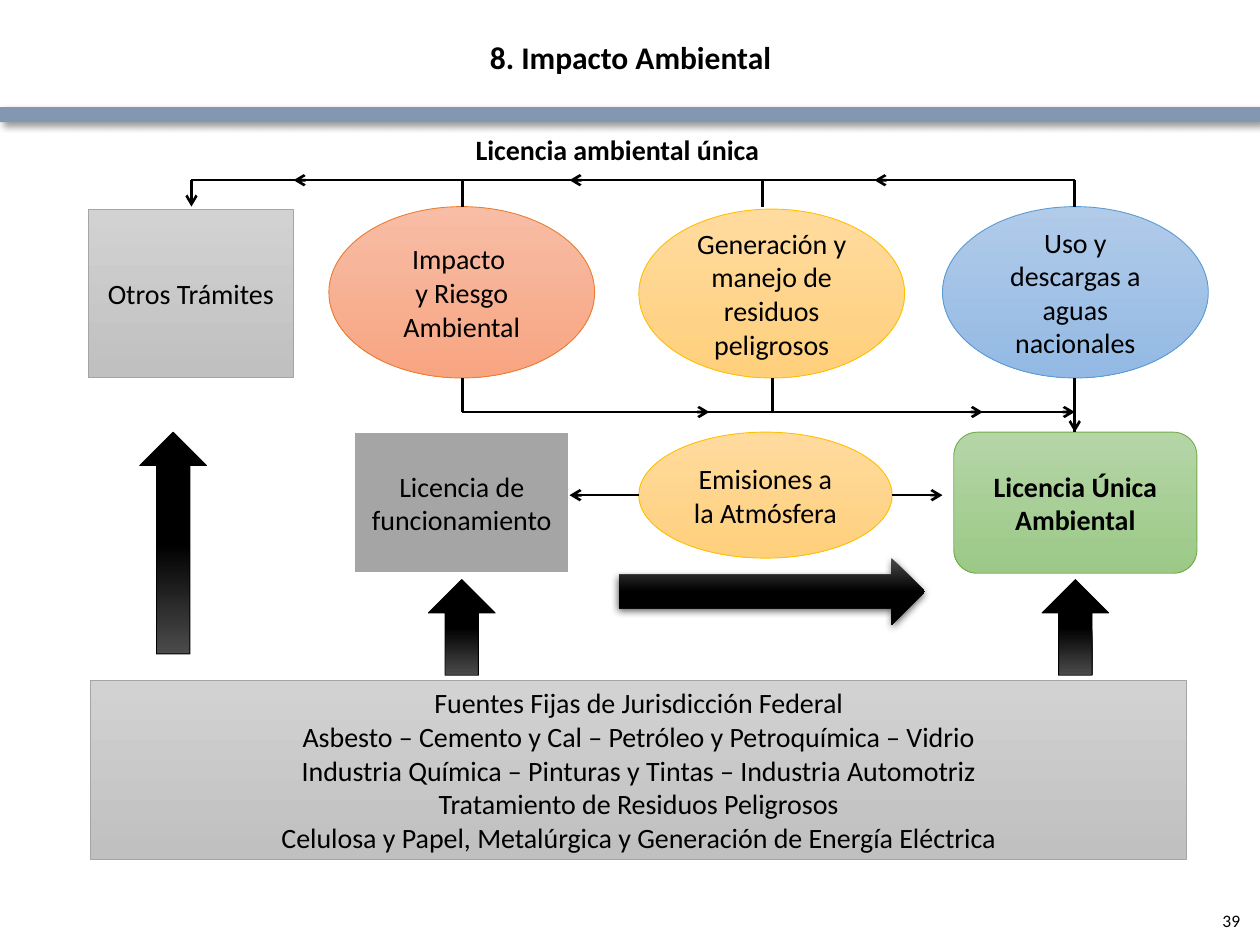
import pptx
import pptx.dml.color
import pptx.enum.shapes
import pptx.enum.text
import pptx.oxml.ns
import pptx.util
from lxml import etree

Inches = pptx.util.Inches
Shapes = pptx.enum.shapes.MSO_SHAPE
Align = pptx.enum.text.PP_ALIGN
Anchor = pptx.enum.text.MSO_ANCHOR

BLACK = "000000"
GRAY = (((0, "D2D2D2"), (1, "C0C0C0")), "A5A5A5", 0.5)
ORANGE = (((0, "F7BDA5"), (1, "F8A582")), "ED7D31", 0.5)
YELLOW = (((0, "FFDB9E"), (1, "FFD07C")), "FFC000", 0.5)
BLUE = (((0, "B1CBE9"), (1, "93B9E4")), "5B9BD5", 0.5)
GREEN = (((0, "B5D5A7"), (1, "9CC987")), "70AD47", 0.5)
PLAIN = ("A5A5A5", "FFFFFF", 1.5)
BAR = ("8497B0", None, 0)
UPWARD = (((0.5, BLACK), (1, "4B4B4B")), BLACK, 0.5)
SIDEWAYS = (((0, "4B4B4B"), (0.5, BLACK)), None, 0)

TITLE = "8. Impacto Ambiental"
SUBTITLE = "Licencia ambiental única"
PAGE_NUMBER = "39"
SOURCES = (
    "Fuentes Fijas de Jurisdicción Federal\n"
    "Asbesto – Cemento y Cal – Petróleo y Petroquímica – Vidrio\v"
    "Industria Química – Pinturas y Tintas – Industria Automotriz\v"
    "Tratamiento de Residuos Peligrosos\n"
    "Celulosa y Papel, Metalúrgica y Generación de Energía Eléctrica"
)

BOXES = [
    (Shapes.RECTANGLE, (0.7, 1.66, 1.63, 1.34), GRAY, "Otros Trámites", False),
    (Shapes.OVAL, (2.61, 1.64, 2.11, 1.36), ORANGE, "Impacto \vy Riesgo Ambiental", False),
    (Shapes.OVAL, (5.07, 1.66, 2.11, 1.34), YELLOW, "Generación y manejo de residuos peligrosos", False),
    (Shapes.OVAL, (7.48, 1.64, 2.11, 1.36), BLUE, "Uso y descargas a aguas nacionales", False),
    (Shapes.RECTANGLE, (0.72, 5.4, 8.7, 1.42), GRAY, SOURCES, False),
    (Shapes.RECTANGLE, (2.81, 3.43, 1.71, 1.12), PLAIN, "Licencia de funcionamiento", False),
    (Shapes.OVAL, (5.07, 3.43, 2.01, 1), YELLOW, "Emisiones a la Atmósfera", False),
    (Shapes.ROUNDED_RECTANGLE, (7.57, 3.43, 1.93, 1.12), GREEN, "Licencia Única Ambiental", True),
]
UP_ARROWS = [(1.11, 3.43, 1.76), (3.4, 4.6, 0.76), (8.27, 4.6, 0.76)]
ARROW_WIDTH = 0.53

TOP, OVAL_TOP, OVAL_BOTTOM, LOWER, BOX_TOP, MIDDLE = 1.43, 1.64, 3, 3.27, 3.43, 3.93
OTHER, IMPACT, WATER = 1.52, 3.67, 8.53
LINES = [
    (WATER, TOP, OTHER, TOP),
    (WATER, TOP, WATER, OVAL_TOP),
    (6.05, TOP, 6.05, OVAL_TOP),
    (IMPACT, OVAL_TOP, IMPACT, TOP),
    (IMPACT, OVAL_BOTTOM, IMPACT, LOWER),
    (6.13, OVAL_BOTTOM, 6.13, LOWER),
    (WATER, OVAL_BOTTOM, WATER, BOX_TOP),
]
ARROWS = [
    (OTHER, TOP, OTHER, OVAL_TOP),
    (2.81, TOP, 2.33, TOP),
    (4.91, TOP, 4.52, TOP),
    (7.66, TOP, 6.94, TOP),
    (IMPACT, LOWER, WATER, LOWER),
    (WATER, LOWER, WATER, BOX_TOP),
    (4.91, LOWER, 5.63, LOWER),
    (6.71, LOWER, 7.8, LOWER),
    (7.08, MIDDLE, 7.48, MIDDLE),
    (5.07, MIDDLE, 4.52, MIDDLE),
]


def color(value):
    return pptx.dml.color.RGBColor.from_string(value)


def add_child(parent, tag, **attributes):
    return etree.SubElement(parent, pptx.oxml.ns.qn(tag), **attributes)


def set_text(shape, text, size=16, bold=False, align=Align.CENTER, anchor=Anchor.MIDDLE):
    frame = shape.text_frame
    frame.text = text
    frame.word_wrap = True
    frame.vertical_anchor = anchor
    font_format = {"name": "Calibri", "size": pptx.util.Pt(size), "bold": bold}
    for paragraph in frame.paragraphs:
        paragraph.alignment = align
        for name, value in font_format.items():
            setattr(paragraph.font, name, value)
        paragraph.font.color.rgb = color(BLACK)


def add_shape(slide, kind, place, style, shadow=None):
    fill, line, width = style
    shape = slide.shapes.add_shape(kind, *map(Inches, place))
    shape.shadow.inherit = False
    if isinstance(fill, str):
        shape.fill.solid()
        shape.fill.fore_color.rgb = color(fill)
    else:
        shape.fill.gradient()
        shape.fill.gradient_angle = 270
        for stop, (position, value) in zip(shape.fill.gradient_stops, fill):
            stop.position = position
            stop.color.rgb = color(value)
    if line:
        shape.line.color.rgb = color(line)
        shape.line.width = pptx.util.Pt(width)
    else:
        shape.line.fill.background()
    if shadow:
        opacity, blur, distance, angle = shadow
        effects = shape._element.spPr.find(pptx.oxml.ns.qn("a:effectLst"))
        outer = add_child(
            effects, "a:outerShdw", blurRad=str(pptx.util.Pt(blur)),
            dist=str(pptx.util.Pt(distance)), dir=str(angle * 60000),
            algn="t", rotWithShape="0",
        )
        add_child(add_child(outer, "a:srgbClr", val=BLACK), "a:alpha", val=str(opacity * 1000))
    return shape


def add_line(slide, ends, arrow):
    connector = slide.shapes.add_connector(
        pptx.enum.shapes.MSO_CONNECTOR.STRAIGHT, *map(Inches, ends)
    )
    connector.line.color.rgb = color(BLACK)
    connector.line.width = pptx.util.Pt(1.5)
    if arrow:
        add_child(connector.line._get_or_add_ln(), "a:tailEnd", type="arrow")
    add_child(connector._element.spPr, "a:effectLst")


def main():
    presentation = pptx.Presentation()
    presentation.slide_width, presentation.slide_height = Inches(10), Inches(7.5)
    slide = presentation.slides.add_slide(presentation.slide_layouts[5])

    title = slide.shapes.title
    title_place = {"left": 1.11, "top": 0.25, "width": 7.79, "height": 0.4}
    for name, value in title_place.items():
        setattr(title, name, Inches(value))
    set_text(title, TITLE, size=18, bold=True, anchor=Anchor.TOP)

    add_shape(slide, Shapes.RECTANGLE, (0, 0.85, 10, 0.12), BAR, (40, 4, 3, 45))
    subtitle = slide.shapes.add_textbox(*map(Inches, (0.5, 1, 8.8, 0.64)))
    set_text(subtitle, SUBTITLE, bold=True, anchor=Anchor.TOP)
    page_number = slide.shapes.add_textbox(*map(Inches, (7.69, 7.11, 2.25, 0.4)))
    set_text(page_number, PAGE_NUMBER, size=10, align=Align.RIGHT)

    for kind, place, style, text, bold in BOXES:
        set_text(add_shape(slide, kind, place, style), text, bold=bold)
    for left, top, height in UP_ARROWS:
        add_shape(slide, Shapes.UP_ARROW, (left, top, ARROW_WIDTH, height), UPWARD)
    add_shape(slide, Shapes.RIGHT_ARROW, (4.91, 4.43, 2.43, ARROW_WIDTH), SIDEWAYS, (63, 4.5, 1.5, 90))
    for ends in LINES:
        add_line(slide, ends, arrow=False)
    for ends in ARROWS:
        add_line(slide, ends, arrow=True)

    presentation.save("out.pptx")


if __name__ == "__main__":
    main()
